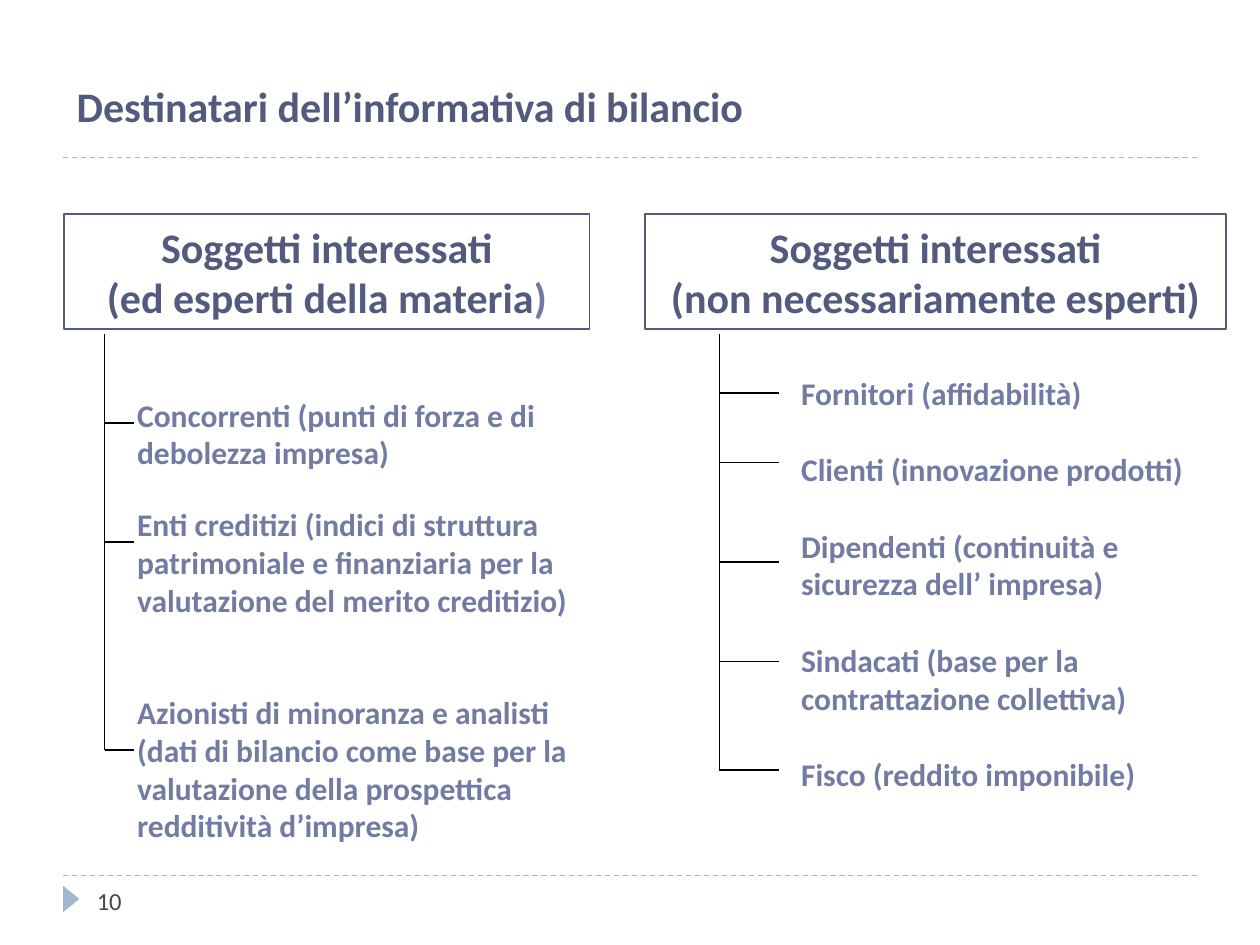
"""Build the slide on the recipients of financial statement information."""
import pptx
import pptx.dml.color
import pptx.enum.dml
import pptx.enum.shapes
import pptx.enum.text
import pptx.oxml
import pptx.util

TITLE = "Destinatari dell’informativa di bilancio"
PAGE_NUMBER = "10"
THEME = {
    "font": "Calibri", "heading": "525B7E", "body": "727CA3", "page": "464653",
    "accent": "9FB8CD", "branch": "000000",
    "heading_size": 24, "body_size": 18, "page_size": 14, "item_gap": 22,
    "rule_width": 0.75, "line_width": 1,
}
COLUMNS, ROWS = 100, 75
HEADER_TOP, HEADER_HEIGHT = 17, 9.1
TREE_TOP = 26.5
TREES = [
    {
        "header": [["Soggetti interessati"],
                   ["(ed esperti della materia", (")", "body")]],
        "left": 5.1, "width": 41.7,
        "trunk": 8.3, "reach": 2.3, "branches": [33.6, 43, 59.5],
        "text_left": 9.9, "text_width": 37,
        "blocks": [
            (30.9, 7, [["Concorrenti (punti di forza e di debolezza impresa)"]]),
            (39.6, 10.1, [["Enti creditizi (indici di struttura patrimoniale e "
                           "finanziaria per la valutazione del merito creditizio)"]]),
            (54.5, 13.1, [["Azionisti di minoranza e analisti",
                           "(dati di bilancio come base per la valutazione della "
                           "prospettica redditività d’impresa)"]]),
        ],
    },
    {
        "header": [["Soggetti interessati"], ["(non necessariamente esperti)"]],
        "left": 51.2, "width": 46.1,
        "trunk": 57.1, "reach": 4.7, "branches": [31.2, 36.7, 44.6, 52.5, 61.1],
        "text_left": 62.6, "text_width": 34.6,
        "blocks": [
            (29.2, 34.3, [
                ["Fornitori (affidabilità)"],
                ["Clienti (innovazione prodotti)"],
                ["Dipendenti (continuità e sicurezza dell’ impresa)"],
                ["Sindacati (base per la", "contrattazione collettiva)"],
                ["Fisco (reddito imponibile)"],
            ]),
        ],
    },
]

presentation = pptx.Presentation()
presentation.slide_width = pptx.util.Inches(10)
presentation.slide_height = pptx.util.Inches(7.5)
slide = presentation.slides.add_slide(presentation.slide_layouts[6])


def color(name):
    return pptx.dml.color.RGBColor.from_string(THEME[name])


def place(*lengths):
    """Turn alternating column and row counts into slide lengths."""
    units = (presentation.slide_width / COLUMNS, presentation.slide_height / ROWS)
    return [round(length * units[index % 2]) for index, length in enumerate(lengths)]


def write(shape, groups, size="body_size", tone="body", bold=True, align="LEFT", anchor="TOP"):
    """Write groups of paragraphs, with a gap before each group after the first."""
    frame = shape.text_frame
    frame.word_wrap = True
    frame.vertical_anchor = getattr(pptx.enum.text.MSO_ANCHOR, anchor)
    paragraph = None
    for group in groups:
        for index, runs in enumerate(group):
            starts_group = paragraph is not None and index == 0
            paragraph = frame.add_paragraph() if paragraph is not None else frame.paragraphs[0]
            paragraph.alignment = getattr(pptx.enum.text.PP_ALIGN, align)
            paragraph.space_before = pptx.util.Pt(THEME["item_gap"] if starts_group else 0)
            for part in [runs] if isinstance(runs, str) else runs:
                text, part_tone = (part, tone) if isinstance(part, str) else part
                run = paragraph.add_run()
                run.text = text
                run.font.name = THEME["font"]
                run.font.size = pptx.util.Pt(THEME[size])
                run.font.bold = bold
                run.font.color.rgb = color(part_tone)


def add_text(box, groups, **style):
    write(slide.shapes.add_textbox(*place(*box)), groups, **style)


def add_line(start, end, tone="branch", width="line_width", dash=None):
    line = slide.shapes.add_connector(
        pptx.enum.shapes.MSO_CONNECTOR.STRAIGHT, *place(*start, *end))
    line.line.color.rgb = color(tone)
    line.line.width = pptx.util.Pt(THEME[width])
    line.line.dash_style = dash
    properties = line._element.spPr
    properties.append(pptx.oxml.parse_xml(
        '<a:effectLst xmlns:a="http://schemas.openxmlformats.org/drawingml/2006/main"/>'))


def add_shape(kind, box):
    shape = slide.shapes.add_shape(getattr(pptx.enum.shapes.MSO_SHAPE, kind), *place(*box))
    shape.shadow.inherit = False
    return shape


def add_tree(tree):
    header = add_shape("RECTANGLE", (tree["left"], HEADER_TOP, tree["width"], HEADER_HEIGHT))
    header.fill.background()
    header.line.color.rgb = color("heading")
    header.line.width = pptx.util.Pt(THEME["line_width"])
    write(header, [tree["header"]], size="heading_size", tone="heading",
          align="CENTER", anchor="MIDDLE")
    for top, height, groups in tree["blocks"]:
        add_text((tree["text_left"], top, tree["text_width"], height), groups)
    trunk = tree["trunk"]
    add_line((trunk, TREE_TOP), (trunk, tree["branches"][-1]))
    for row in tree["branches"]:
        add_line((trunk, row), (trunk + tree["reach"], row))


for rule_row in (69.5, 12.5):
    add_line((5, rule_row), (95, rule_row), tone="accent", width="rule_width",
             dash=pptx.enum.dml.MSO_LINE.DASH)
marker = add_shape("ISOSCELES_TRIANGLE", (4.6, 70.7, 2.1, 1.3))
marker.rotation = 90
marker.fill.solid()
marker.fill.fore_color.rgb = color("accent")
marker.line.fill.background()

add_text((5.1, 5.9, 94.9, 5), [[TITLE]], size="heading_size", tone="heading")
for tree in TREES:
    add_tree(tree)
add_text((6.7, 69.5, 21.7, 4), [[PAGE_NUMBER]], size="page_size", tone="page",
         bold=False, anchor="MIDDLE")
presentation.save("out.pptx")
